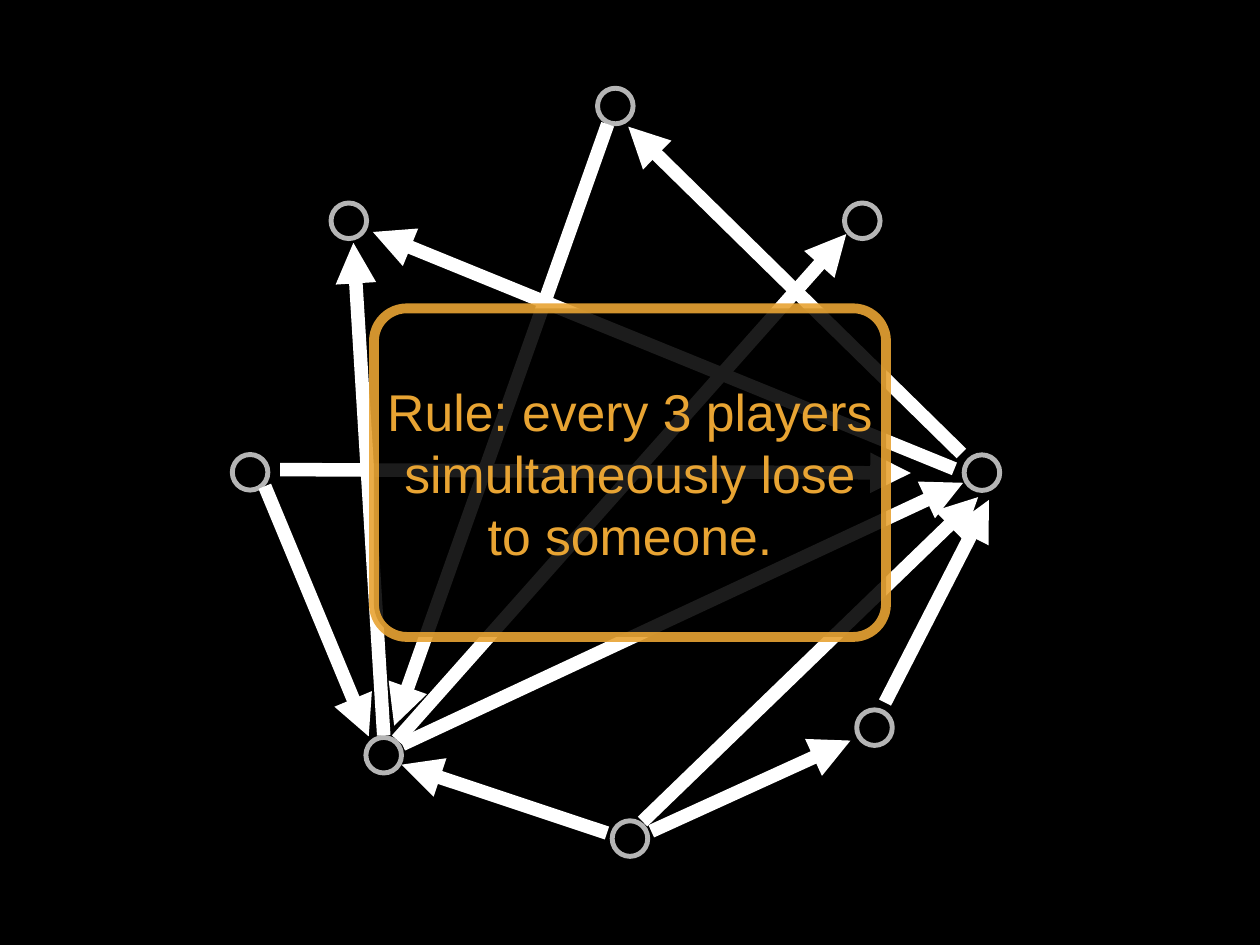
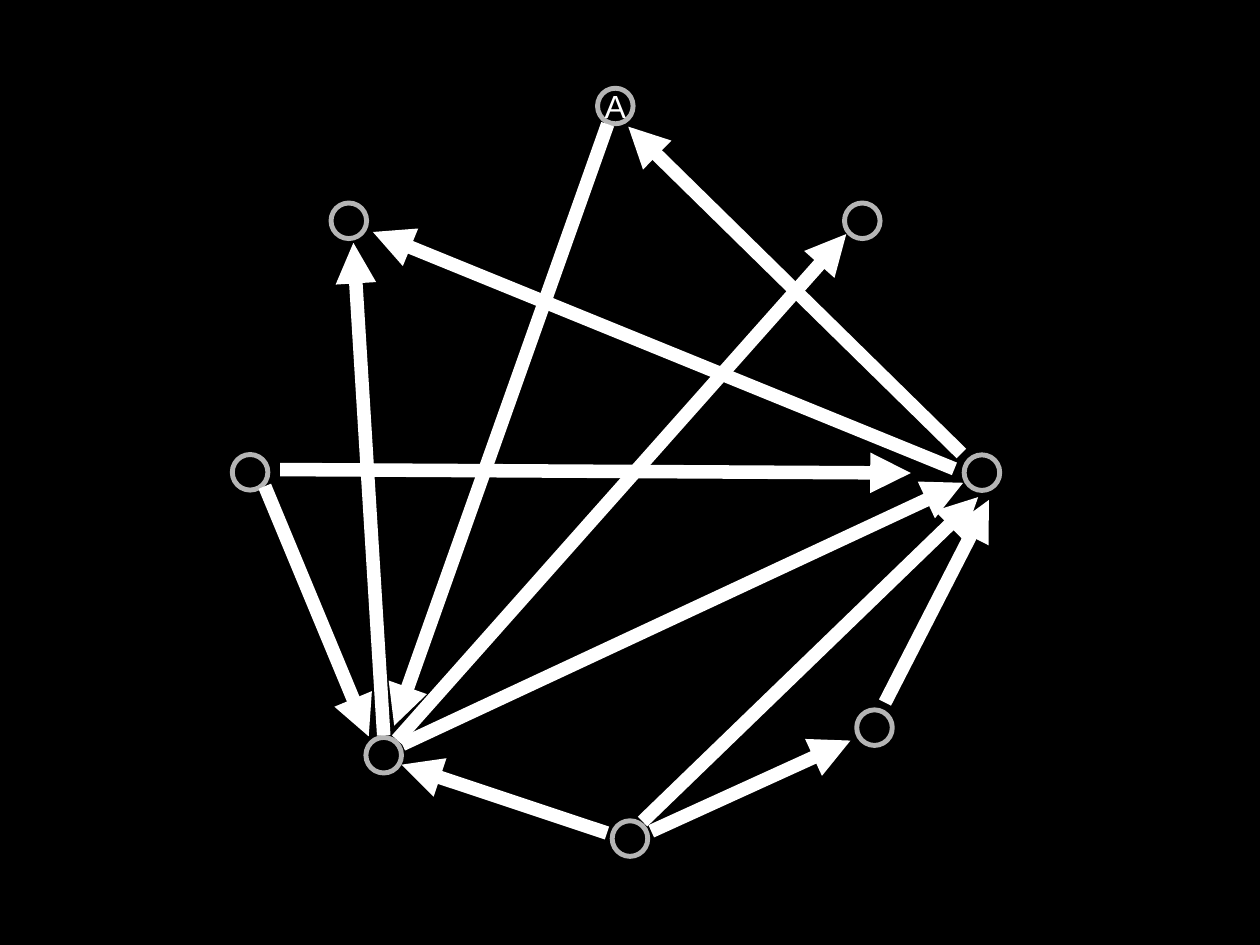
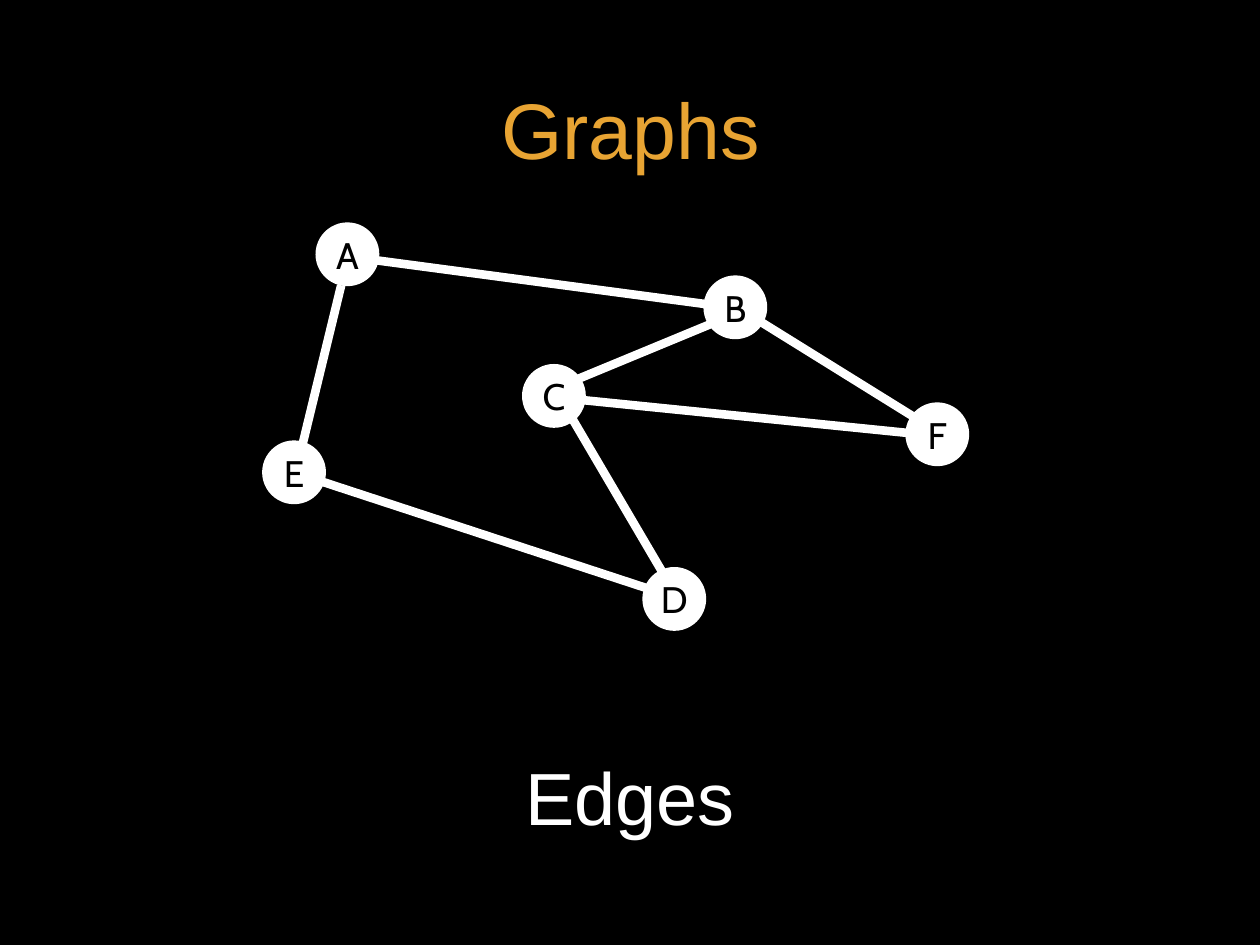
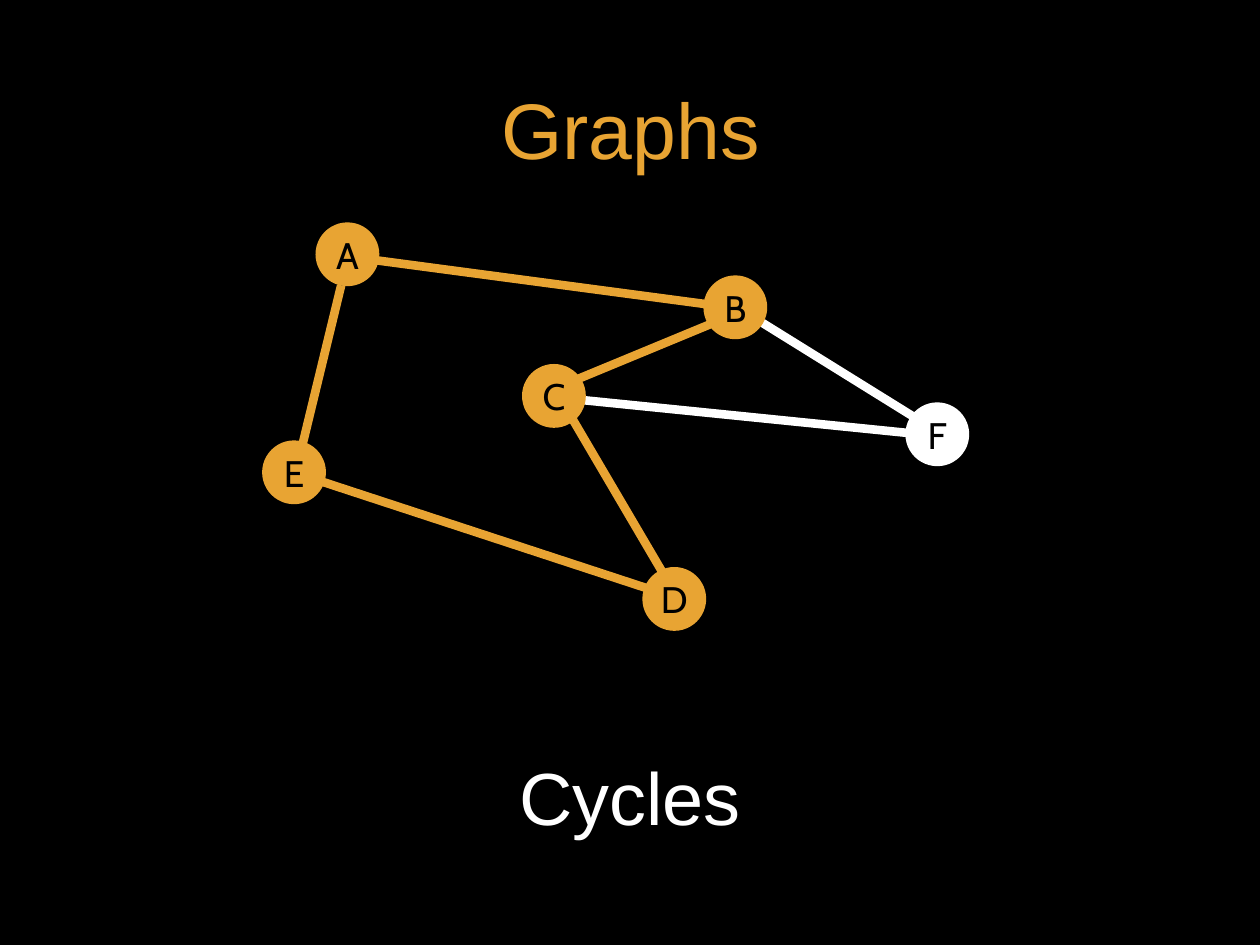
from dataclasses import dataclass

from lxml.etree import SubElement
from pptx import Presentation
from pptx.dml.color import RGBColor
from pptx.enum.shapes import MSO_CONNECTOR, MSO_SHAPE
from pptx.enum.text import MSO_ANCHOR, MSO_AUTO_SIZE, PP_ALIGN
from pptx.oxml.ns import qn
from pptx.util import Cm, Pt


@dataclass(frozen=True)
class Theme:
    black: RGBColor = RGBColor.from_string("000000")
    white: RGBColor = RGBColor.from_string("FFFFFF")
    orange: RGBColor = RGBColor.from_string("E8A433")
    text_font: str = "Arial"
    node_font: str = "Cabin"
    title_size: int = 64
    caption_size: int = 60
    rule_size: int = 42
    node_size: int = 30
    player_size: int = 26
    arrow_width: int = 11
    box_width: int = 8
    edge_width: int = 7
    ring_width: int = 4


theme = Theme()


def write_text(shape, text, size, color, font=theme.text_font, wrap=True):
    """Put one centred line of text in a shape, without margins."""
    frame = shape.text_frame
    frame.text = text
    frame.auto_size = MSO_AUTO_SIZE.NONE
    frame.word_wrap = wrap
    frame.vertical_anchor = MSO_ANCHOR.MIDDLE
    frame.margin_left = frame.margin_right = 0
    frame.margin_top = frame.margin_bottom = 0
    para = frame.paragraphs[0]
    para.alignment = PP_ALIGN.CENTER
    para.space_before = Pt(0)
    para.font.name = font
    para.font.size = Pt(size)
    para.font.color.rgb = color


def add_line(slide, start, end, color, width, arrow=False):
    points = [Cm(value) for value in (*start, *end)]
    line = slide.shapes.add_connector(MSO_CONNECTOR.STRAIGHT, *points)
    line.line.color.rgb = color
    line.line.width = Pt(width)
    properties = line._element.spPr
    if arrow:
        SubElement(properties.find(qn("a:ln")), qn("a:tailEnd"), type="triangle")
    SubElement(properties, qn("a:effectLst"))


deck = Presentation()
deck.slide_width, deck.slide_height = Cm(36.12), Cm(27.09)
background = deck.slide_master.background.fill
background.solid()
background.fore_color.rgb = theme.black
title_layout, blank_layout = deck.slide_layouts[0], deck.slide_layouts[6]
translucent = []

# Tournament: each arrow joins two players, whose centres are listed first
ring_size = 1.02
top_player = (17.64, 3.04)
players = [
    top_player, (11, 21.65), (25.07, 20.86), (24.72, 6.33),
    (7.17, 13.54), (18.06, 24.04), (28.15, 13.55), (10, 6.33),
]
arrows = [
    ((11.38, 21.21), (24.26, 6.71)),
    ((11.53, 21.34), (27.61, 13.84)),
    ((11, 21.08), (10.13, 6.96)),
    ((17.42, 3.56), (11.3, 20.8)),
    ((7.59, 13.94), (10.57, 21.11)),
    ((17.4, 23.88), (11.51, 21.92)),
    ((18.67, 23.83), (24.38, 21.23)),
    ((18.42, 23.55), (28.04, 14.25)),
    ((25.37, 20.14), (28.35, 14.33)),
    ((27.56, 13), (18.01, 3.63)),
    ((27.36, 13.44), (10.69, 6.65)),
    ((8.03, 13.46), (26.11, 13.56)),
]
for rule, top_label in (
    ("Rule: every 3 players simultaneously lose to someone.", ""),
    ("", "A"),
):
    slide = deck.slides.add_slide(blank_layout)
    for player in players:
        left, top = (Cm(center - ring_size / 2) for center in player)
        ring = slide.shapes.add_shape(
            MSO_SHAPE.OVAL, left, top, Cm(ring_size), Cm(ring_size))
        ring.shadow.inherit = False
        ring.fill.background()
        ring.line.color.rgb = theme.white
        ring.line.width = Pt(theme.ring_width)
        translucent.append((ring, 71))
        if top_label and player == top_player:
            write_text(ring, top_label, theme.player_size, theme.white, wrap=False)
    for start, end in arrows:
        add_line(slide, start, end, theme.white, theme.arrow_width, arrow=True)
    if rule:
        box = slide.shapes.add_shape(
            MSO_SHAPE.ROUNDED_RECTANGLE, Cm(10.72), Cm(8.84), Cm(14.68), Cm(9.42))
        box.adjustments[0] = 0.1
        box.shadow.inherit = False
        box.fill.solid()
        box.fill.fore_color.rgb = theme.black
        box.line.color.rgb = theme.orange
        box.line.width = Pt(theme.box_width)
        translucent.append((box, 89))
        write_text(box, rule, theme.rule_size, theme.orange)

for shape, opacity in translucent:
    for color in shape._element.spPr.iter(qn("a:srgbClr")):
        SubElement(color, qn("a:alpha"), val=str(opacity * 1000))

# Graph: node centres by name, edge ends by the pair of nodes they join
node_size = 1.83
nodes = {
    "A": (9.96, 7.29), "F": (26.87, 12.45), "E": (8.43, 13.54),
    "D": (19.33, 17.17), "C": (15.88, 11.35), "B": (21.08, 8.81),
}
edges = {
    "AE": ((9.78, 8.18), (8.59, 13.08)),
    "BC": ((20.42, 9.27), (16.48, 10.9)),
    "DE": ((18.72, 16.92), (9.27, 13.82)),
    "FC": ((26.11, 12.42), (16.61, 11.46)),
    "CD": ((16.38, 11.96), (19.2, 16.76)),
    "BA": ((20.4, 8.74), (10.62, 7.44)),
    "FB": ((26.34, 12.04), (21.67, 9.14)),
}
for caption, highlighted in (("Edges", ""), ("Cycles", "ABCDE")):
    slide = deck.slides.add_slide(title_layout)
    title, subtitle = slide.placeholders
    title.left, title.top, title.width, title.height = (
        Cm(14.15), Cm(2.18), Cm(7.85), Cm(3))
    write_text(title, "Graphs", theme.title_size, theme.orange, wrap=False)
    subtitle.left, subtitle.top, subtitle.width, subtitle.height = (
        Cm(3.53), Cm(20.47), Cm(29.06), Cm(4.72))
    write_text(subtitle, caption, theme.caption_size, theme.white)
    for pair, (start, end) in edges.items():
        color = theme.orange if set(pair) <= set(highlighted) else theme.white
        add_line(slide, start, end, color, theme.edge_width)
    for name, position in nodes.items():
        left, top = (Cm(center - node_size / 2) for center in position)
        node = slide.shapes.add_shape(
            MSO_SHAPE.OVAL, left, top, Cm(node_size), Cm(node_size))
        node.shadow.inherit = False
        node.fill.solid()
        node.fill.fore_color.rgb = theme.orange if name in highlighted else theme.white
        node.line.fill.background()
        write_text(node, name, theme.node_size, theme.black, theme.node_font, wrap=False)

deck.save("out.pptx")
